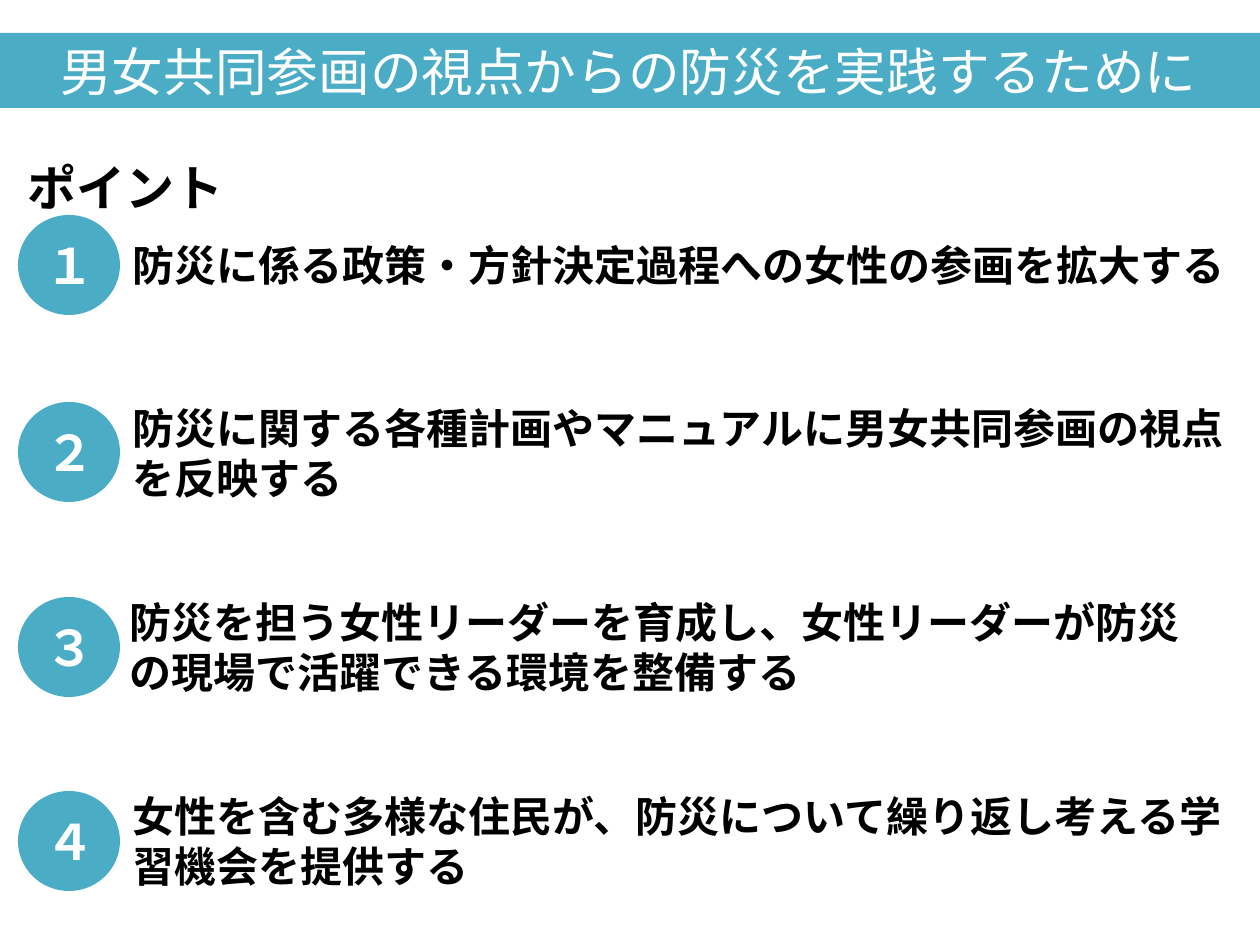
import pptx
import pptx.util
import pptx.dml.color
import pptx.enum.shapes
import pptx.enum.text

Pt = pptx.util.Pt
RGB = pptx.dml.color.RGBColor
ALIGN = pptx.enum.text.PP_ALIGN
ANCHOR = pptx.enum.text.MSO_ANCHOR
FIT = pptx.enum.text.MSO_AUTO_SIZE
OVAL = pptx.enum.shapes.MSO_SHAPE.OVAL

TEAL = RGB(0x4B, 0xAC, 0xC6)
WHITE = RGB(0xFF, 0xFF, 0xFF)
BLACK = RGB(0x00, 0x00, 0x00)
SCALE = 914400 / 126

TITLE = dict(name="Arial", size=Pt(29.5), bold=False)
HEAD = dict(name="Noto Sans CJK JP", size=Pt(28), bold=True)
POINT = dict(name="Arial", size=Pt(24), bold=True)

POINTS = [
    ("１", 215, (120, 233, 1140, 63), "防災に係る政策・方針決定過程への女性の参画を拡大する"),
    ("２", 402, (120, 396, 1140, 115), "防災に関する各種計画やマニュアルに男女共同参画の視点を反映する"),
    ("３", 597, (117, 590, 1079, 115),
     "防災を担う女性リーダーを育成し、女性リーダーが防災の現場で活躍できる環境を整備する"),
    ("４", 791, (120, 784, 1115, 115), "女性を含む多様な住民が、防災について繰り返し考える学習機会を提供する"),
]


def px(num):
    """Turn a length in px into EMU."""
    return pptx.util.Emu(round(num * SCALE))


def place(shape, box):
    """Move a placeholder to a box given in px."""
    for key, num in zip(("left", "top", "width", "height"), box):
        setattr(shape, key, px(num))


def write(shape, text, font, tint, align=ALIGN.LEFT, anchor=ANCHOR.TOP, lines=1.0):
    """Set the text of a shape and its format."""
    frame = shape.text_frame
    frame.text = text
    para = frame.paragraphs[0]
    frame_look = dict(word_wrap=True, auto_size=FIT.NONE, vertical_anchor=anchor)
    para_look = dict(alignment=align, line_spacing=lines, space_before=Pt(0))
    for item, look in ((frame, frame_look), (para, para_look), (para.runs[0].font, font)):
        for key, val in look.items():
            setattr(item, key, val)
    para.runs[0].font.color.rgb = tint


def paint(shape):
    """Fill a shape with teal and hide its line."""
    shape.fill.solid()
    shape.fill.fore_color.rgb = TEAL
    shape.line.fill.background()


def add_badge(slide, text, top):
    """Add a round badge with a number."""
    badge = slide.shapes.add_shape(OVAL, px(18), px(top), px(102), px(100))
    badge.shadow.inherit = False
    paint(badge)
    write(badge, text, HEAD, WHITE, ALIGN.CENTER, ANCHOR.MIDDLE)


def add_point(slide, text, box):
    """Add the text of one point."""
    label = slide.shapes.add_textbox(*map(px, box))
    write(label, text, POINT, BLACK)


def main():
    """Build the slide and save it."""
    deck = pptx.Presentation()
    deck.slide_width, deck.slide_height = px(1260), px(945)
    slide = deck.slides.add_slide(deck.slide_layouts[2])
    title, body = slide.placeholders[0], slide.placeholders[1]

    place(title, (-3, 33, 1263, 75))
    paint(title)
    write(title, "男女共同参画の視点からの防災を実践するために", TITLE, WHITE,
          ALIGN.CENTER, ANCHOR.MIDDLE)
    place(body, (15, 122, 297, 96))
    write(body, "ポイント", HEAD, BLACK, lines=1.5)

    for mark, top, box, text in POINTS:
        add_badge(slide, mark, top)
        add_point(slide, text, box)
    deck.save("out.pptx")


if __name__ == "__main__":
    main()
